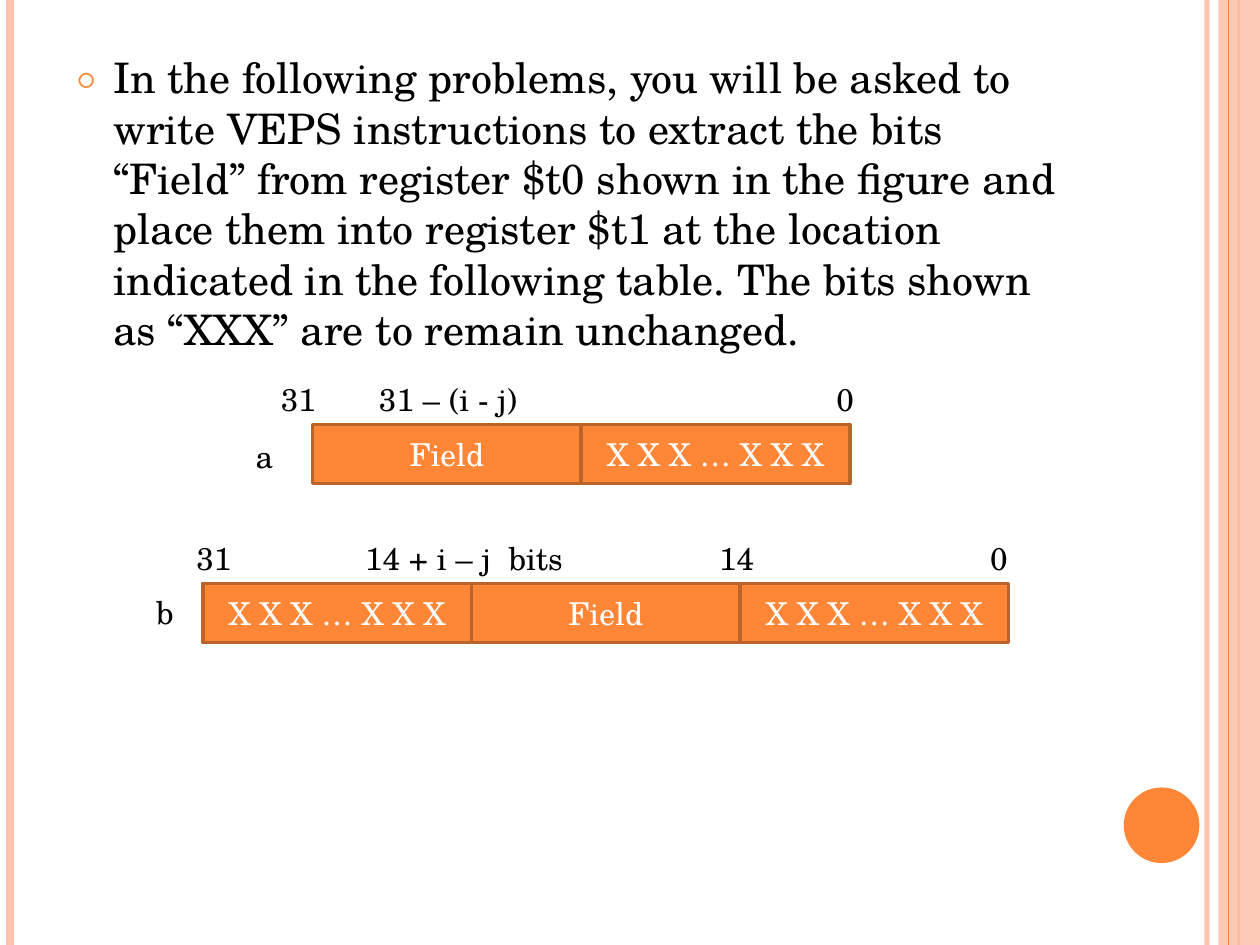
"""Build a slide on extracting a bit field from one VEPS register into another."""
from dataclasses import dataclass

from lxml import etree
from pptx import Presentation
from pptx.dml.color import RGBColor
from pptx.enum.shapes import MSO_CONNECTOR, MSO_SHAPE
from pptx.enum.text import MSO_ANCHOR, MSO_AUTO_SIZE, PP_ALIGN
from pptx.oxml.ns import qn
from pptx.util import Pt

STRAIGHT = MSO_CONNECTOR.STRAIGHT
RECTANGLE, OVAL = MSO_SHAPE.RECTANGLE, MSO_SHAPE.OVAL
TOP, MIDDLE = MSO_ANCHOR.TOP, MSO_ANCHOR.MIDDLE
LEFT, CENTER = PP_ALIGN.LEFT, PP_ALIGN.CENTER
NO_AUTOFIT = MSO_AUTO_SIZE.NONE


@dataclass(frozen=True)
class Theme:
    font: str = "TeX Gyre Schola"
    text: str = "000000"
    inverse: str = "FFFFFF"
    accent: str = "FE8637"
    outline: str = "BC6329"
    pale: str = "FEC3AE"
    body_size: int = 24
    label_size: int = 18


THEME = Theme()
WIDTH, HEIGHT = 720, 540
CELL_WIDTH, CELL_HEIGHT = 153.5, 33.8
LABEL_HEIGHT = 29.1
LABEL_RISE = 28.8

PROBLEM = (
    "In the following problems, you will be asked to write VEPS instructions to "
    "extract the bits “Field” from register $t0 shown in the figure and place them "
    "into register $t1 at the location indicated in the following table. The bits "
    "shown as “XXX” are to remain unchanged."
)
UNCHANGED = "X X X … X X X"
REGISTERS = [
    {
        "name": ("a", 139, 246.2),
        "origin": (178.6, 242.6),
        "cells": ["Field", UNCHANGED],
        "bits": [("31", 153.4, 45), ("31 – (i - j)", 209.5, 108), ("0", 470.9, 45)],
    },
    {
        "name": ("b", 82.1, 335.5),
        "origin": (115.9, 333.4),
        "cells": [UNCHANGED, "Field", UNCHANGED],
        "bits": [("31", 105.1, 45), ("14 + i – j  bits", 201.6, 129),
                 ("14", 403.9, 45), ("0", 558.7, 45)],
    },
]
RULES_BELOW_BAND = [(689.8, THEME.pale, 3, 93), (5.8, THEME.pale, 4.5, 100),
                    (707.8, THEME.accent, 1.5, 100)]
RULES_ABOVE_BAND = [(702, THEME.accent, 0.75, 100)]
BAND = (696.2, 0, 23.8, HEIGHT)
DISC = (642.2, 450, 43.2, 43.2)


def color(value):
    return RGBColor.from_string(value)


def set_opacity(element, percent):
    for tint in element.spPr.iter(qn("a:srgbClr")):
        etree.SubElement(tint, qn("a:alpha"), val=str(percent * 1000))


def write(shape, text, size, ink, align=LEFT, anchor=TOP):
    frame = shape.text_frame
    frame.text = text
    frame.word_wrap = True
    frame.auto_size = NO_AUTOFIT
    frame.vertical_anchor = anchor
    paragraph = frame.paragraphs[0]
    paragraph.alignment = align
    font = paragraph.runs[0].font
    font.name, font.size = THEME.font, Pt(size)
    font.color.rgb = color(ink)
    return paragraph


def add_rules(slide, rules):
    for x, tint, weight, opacity in rules:
        rule = slide.shapes.add_connector(STRAIGHT, Pt(x), Pt(0), Pt(x), Pt(HEIGHT))
        rule.line.color.rgb = color(tint)
        rule.line.width = Pt(weight)
        if opacity < 100:
            set_opacity(rule._element, opacity)
        etree.SubElement(rule._element.spPr, qn("a:effectLst"))


def add_filled(slide, preset, box, tint):
    shape = slide.shapes.add_shape(preset, *map(Pt, box))
    shape.shadow.inherit = False
    shape.fill.solid()
    shape.fill.fore_color.rgb = color(tint)
    shape.line.fill.background()
    return shape


def add_label(slide, text, x, y, width):
    label = slide.shapes.add_textbox(*map(Pt, (x, y, width, LABEL_HEIGHT)))
    write(label, text, THEME.label_size, THEME.text)


def add_register(slide, register):
    x, y = register["origin"]
    for index, text in enumerate(register["cells"]):
        box = (x + index * CELL_WIDTH, y, CELL_WIDTH, CELL_HEIGHT)
        cell = add_filled(slide, RECTANGLE, box, THEME.accent)
        cell.line.color.rgb = color(THEME.outline)
        cell.line.width = Pt(2)
        write(cell, text, THEME.label_size, THEME.inverse, CENTER, MIDDLE)
    for text, left, width in register["bits"]:
        add_label(slide, text, left, y - LABEL_RISE, width)
    add_label(slide, *register["name"], 22.3)


def add_problem(slide):
    body = slide.placeholders[1]
    body.left, body.top, body.width, body.height = map(Pt, (36, 25.9, 588.2, 187.2))
    paragraph = write(body, PROBLEM, THEME.body_size, THEME.text)
    paragraph.space_before = Pt(6)
    properties = paragraph._p.get_or_add_pPr()
    properties.set("marL", str(Pt(21.6)))
    properties.set("indent", str(Pt(-21.6)))
    bullet_color = etree.SubElement(properties, qn("a:buClr"))
    etree.SubElement(bullet_color, qn("a:srgbClr"), val=THEME.accent)
    etree.SubElement(properties, qn("a:buSzPct"), val="70000")
    etree.SubElement(properties, qn("a:buFont"), typeface=THEME.font)
    etree.SubElement(properties, qn("a:buChar"), char="○")


def main():
    presentation = Presentation()
    presentation.slide_width, presentation.slide_height = Pt(WIDTH), Pt(HEIGHT)
    slide = presentation.slides.add_slide(presentation.slide_layouts[1])
    title = slide.shapes.title._element
    title.getparent().remove(title)

    add_problem(slide)
    add_rules(slide, RULES_BELOW_BAND)
    band = add_filled(slide, RECTANGLE, BAND, THEME.pale)
    set_opacity(band._element, 87)
    add_rules(slide, RULES_ABOVE_BAND)
    add_filled(slide, OVAL, DISC, THEME.accent)
    for register in REGISTERS:
        add_register(slide, register)
    presentation.save("out.pptx")


if __name__ == "__main__":
    main()
